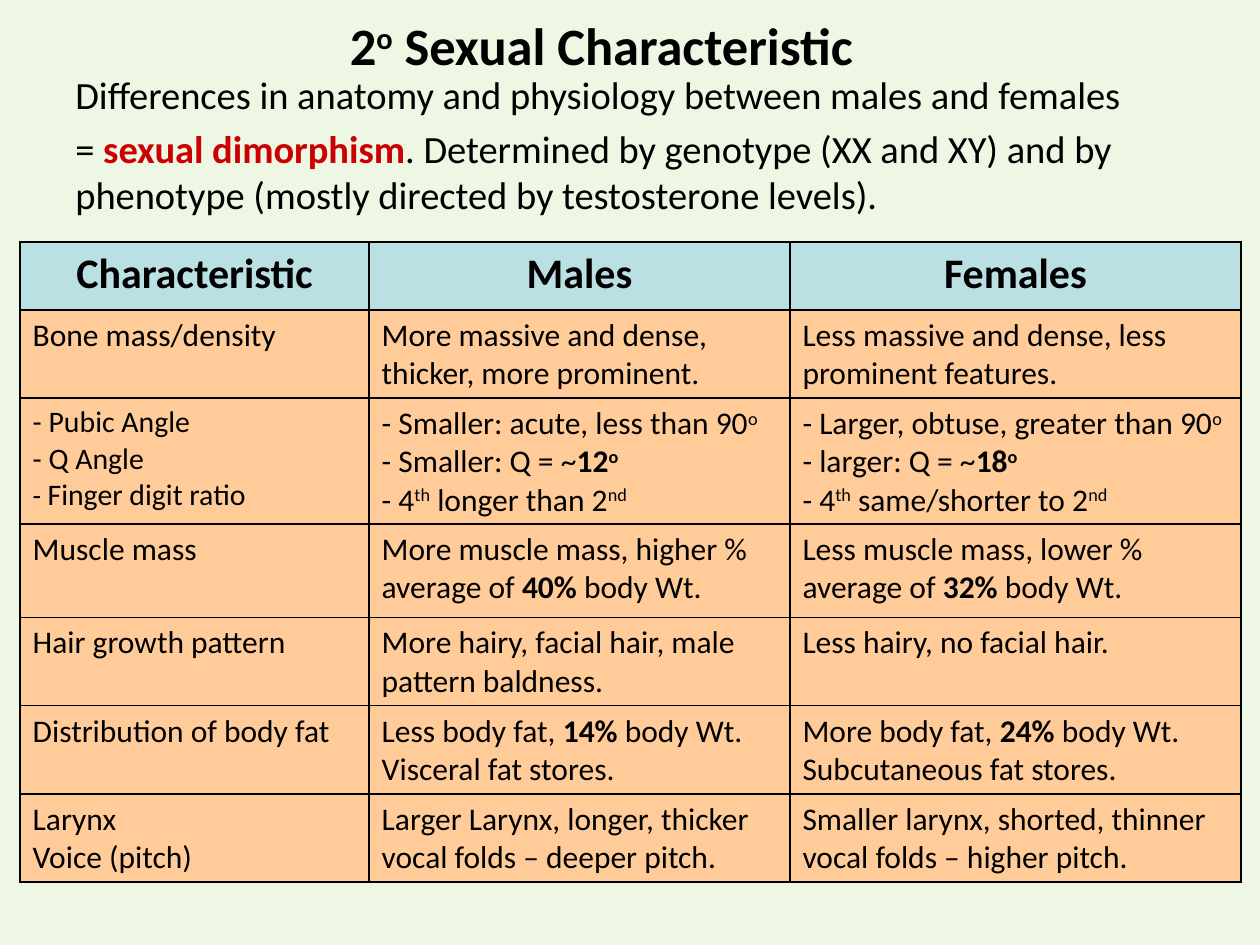
import pptx
import pptx.dml.color
import pptx.enum.text
import pptx.oxml
import pptx.oxml.ns
import pptx.util
from pptx.util import Inches

ALIGN = pptx.enum.text.PP_ALIGN
MARKS = {
    "*": {"bold": True},
    "^": {"raised": True},
    "!": {"bold": True, "raised": True},
    "#": {"bold": True, "color": "CC0000"},
    "<": {"size": 16},
}
COLUMNS = [2.77, 3.34, 3.58]
HEIGHTS = [0.54, 0.7, 1, 0.74, 0.7, 0.7, 0.7]
HEADINGS = ["Characteristic", "Males", "Females"]
TRAITS = [
    ["Bone mass/density",
     "More massive and dense, thicker, more prominent.",
     "Less massive and dense, less prominent features."],
    ["- Pubic Angle\n- Q Angle\n<- |Finger digit ratio",
     "- Smaller: acute, less than 90|^o\n- Smaller: Q = ~|*12|!o\n- 4|^th| longer than 2|^nd",
     "- Larger, obtuse, greater than 90|^o\n- larger: Q = ~|*18|!o\n- 4|^th| same/shorter to 2|^nd"],
    ["Muscle mass",
     "More muscle mass, higher % average of |*40%| body Wt.",
     "Less muscle mass, lower % average of |*32%| body Wt."],
    ["Hair growth pattern",
     "More hairy, facial hair, male pattern baldness.",
     "Less hairy, no facial hair."],
    ["Distribution of body fat",
     "Less body fat, |*14%| body Wt.\nVisceral fat stores.",
     "More body fat, |*24%| body Wt.\nSubcutaneous fat stores."],
    ["Larynx\nVoice (pitch)",
     "Larger Larynx, longer, thicker vocal folds – deeper pitch.",
     "Smaller larynx, shorted, thinner vocal folds – higher pitch."],
]


def rgb(value):
    """Return the colour for a hex string."""
    return pptx.dml.color.RGBColor.from_string(value)


def add_span(para, text, size=18, bold=False, color="000000", raised=False):
    """Add one formatted run to a paragraph."""
    span = para.add_run()
    span.text = text
    span.font.name = "Calibri"
    span.font.size = pptx.util.Pt(size)
    span.font.bold = bold
    span.font.color.rgb = rgb(color)
    if raised:
        span._r.get_or_add_rPr().set("baseline", "30000")


def write(frame, text, align=ALIGN.LEFT, gap=0, **style):
    """Fill a frame from lines whose spans are parted by bars and led by marks."""
    for index, line in enumerate(text.split("\n")):
        para = frame.add_paragraph() if index else frame.paragraphs[0]
        para.alignment = align
        if index and gap:
            para.space_before = pptx.util.Pt(gap)
        for part in line.split("|"):
            mark = MARKS.get(part[0], {})
            add_span(para, part[1:] if mark else part, **{**style, **mark})


def add_text(page, box, text, **style):
    """Add a wrapping, vertically centred text box."""
    frame = page.shapes.add_textbox(*map(Inches, box)).text_frame
    frame.word_wrap = True
    frame.auto_size = pptx.enum.text.MSO_AUTO_SIZE.SHAPE_TO_FIT_TEXT
    frame.vertical_anchor = pptx.enum.text.MSO_ANCHOR.MIDDLE
    write(frame, text, **style)
    return frame


def add_title(page, box):
    """Add the centred title with its hanging indent."""
    frame = add_text(page, box, "2|!o| Sexual Characteristic",
                     align=ALIGN.CENTER, size=30, bold=True)
    layout = frame.paragraphs[0]._p.get_or_add_pPr()
    layout.set("marL", str(Inches(0.38)))
    layout.set("indent", str(Inches(-0.38)))


def add_intro(page, box):
    """Add the definition under the title."""
    add_text(page, box,
             "Differences in anatomy and physiology between males and females\n"
             "= |#sexual dimorphism|. Determined by genotype (XX and XY) and by "
             "phenotype (mostly directed by testosterone levels).",
             gap=4.4, size=22)


def style_cell(cell, color):
    """Give a cell its fill and thin black borders."""
    namespace = pptx.oxml.ns.nsdecls("a")
    properties = cell._tc.get_or_add_tcPr()
    for side in ("lnL", "lnR", "lnT", "lnB"):
        properties.append(pptx.oxml.parse_xml(
            f'<a:{side} {namespace} w="12700"><a:solidFill>'
            f'<a:srgbClr val="000000"/></a:solidFill></a:{side}>'))
    cell.fill.solid()
    cell.fill.fore_color.rgb = rgb(color)


def add_comparison(page, box):
    """Add the table that compares males and females."""
    rows = [HEADINGS] + TRAITS
    table = page.shapes.add_table(len(rows), len(COLUMNS), *map(Inches, box)).table
    for column, width in zip(table.columns, COLUMNS):
        column.width = Inches(width)
    for r, (texts, height) in enumerate(zip(rows, HEIGHTS)):
        table.rows[r].height = Inches(height)
        for c, text in enumerate(texts):
            cell = table.cell(r, c)
            style_cell(cell, "FFCC99" if r else "BBE0E3")
            if r == 0:
                write(cell.text_frame, text, align=ALIGN.CENTER, size=24, bold=True)
            else:
                write(cell.text_frame, text, size=17 if (r, c) == (2, 0) else 18)


def main():
    """Build and save the deck."""
    deck = pptx.Presentation()
    deck.slide_width, deck.slide_height = Inches(10), Inches(7.5)
    page = deck.slides.add_slide(deck.slide_layouts[6])
    page.background.fill.solid()
    page.background.fill.fore_color.rgb = rgb("EEF6E4")
    add_title(page, (1.16, 0.05, 7.23, 0.61))
    add_intro(page, (0.5, 0.5, 9, 1.29))
    add_comparison(page, (0.16, 1.92, sum(COLUMNS), sum(HEIGHTS)))
    deck.save("out.pptx")


if __name__ == "__main__":
    main()
